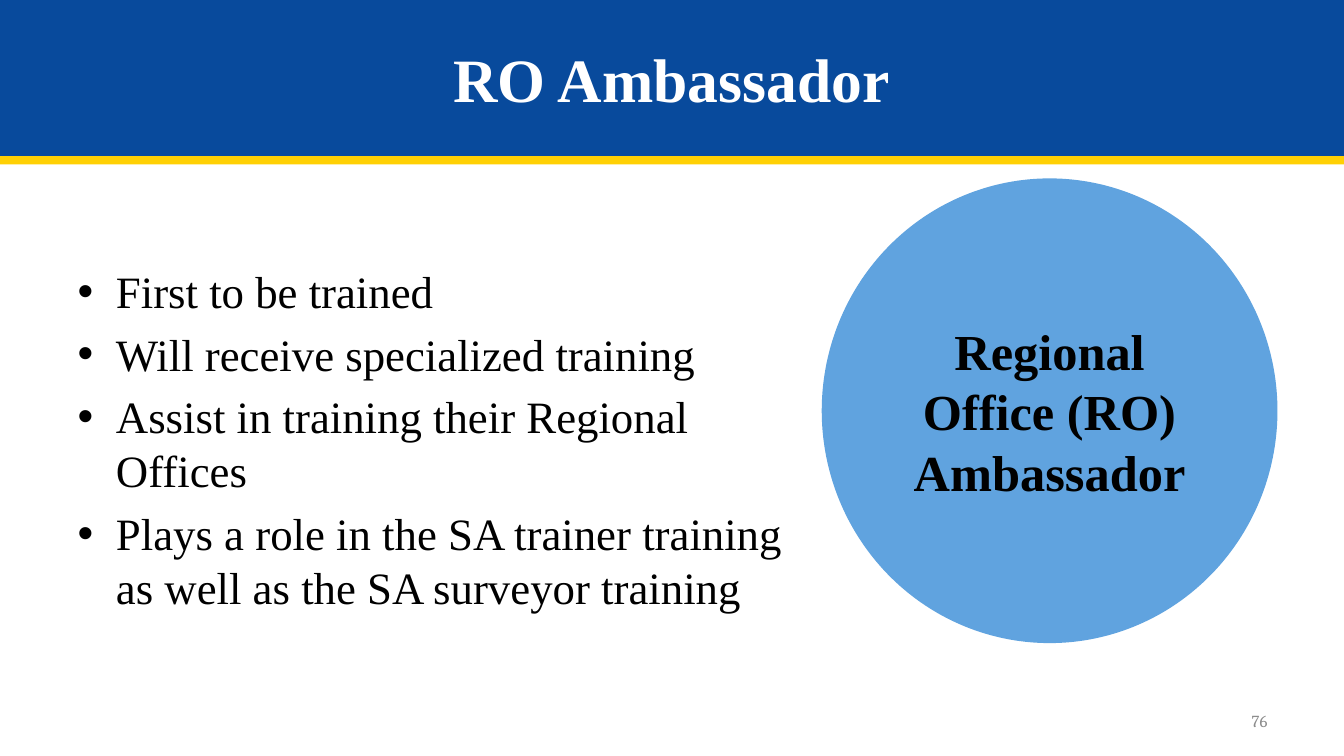
from dataclasses import dataclass

from lxml import etree
from pptx import Presentation
from pptx.dml.color import RGBColor
from pptx.enum.shapes import MSO_SHAPE
from pptx.enum.text import MSO_ANCHOR, MSO_AUTO_SIZE, PP_ALIGN
from pptx.oxml.ns import qn
from pptx.util import Inches, Pt

RECTANGLE = MSO_SHAPE.RECTANGLE
CONNECTOR_CIRCLE = MSO_SHAPE.FLOWCHART_CONNECTOR
MIDDLE = MSO_ANCHOR.MIDDLE
NO_AUTOFIT = MSO_AUTO_SIZE.NONE
LEFT, CENTER, RIGHT = PP_ALIGN.LEFT, PP_ALIGN.CENTER, PP_ALIGN.RIGHT

SLIDE_WIDTH, SLIDE_HEIGHT = 13.33, 7.5
BANNER_HEIGHT = 1.55
BULLET_INDENT = 0.38
DUTIES = [
    "First to be trained",
    "Will receive specialized training",
    "Assist in training their Regional Offices",
    "Plays a role in the SA trainer training as well as the SA surveyor training",
]


@dataclass(frozen=True)
class Theme:
    font: str = "Times New Roman"
    number_font: str = "Cambria"
    banner: str = "084A9C"
    stripe: str = "FFD004"
    circle: str = "60A3DF"
    light: str = "FFFFFF"
    dark: str = "000000"
    muted: str = "8C8C8C"
    title_size: int = 44
    circle_size: int = 36
    body_size: int = 32
    number_size: int = 12


class SlideBuilder:
    def __init__(self, presentation, theme):
        self.theme = theme
        self.slide = presentation.slides.add_slide(presentation.slide_layouts[1])

    def place(self, shape, box):
        shape.left, shape.top, shape.width, shape.height = map(Inches, box)

    def fill(self, shape, color):
        shape.fill.solid()
        shape.fill.fore_color.rgb = RGBColor.from_string(color)

    def format_text(self, shape, size, color, alignment, bold=False, font=None):
        frame = shape.text_frame
        frame.word_wrap = True
        frame.auto_size = NO_AUTOFIT
        frame.vertical_anchor = MIDDLE
        for paragraph in frame.paragraphs:
            paragraph.alignment = alignment
            for run in paragraph.runs:
                run.font.name = font or self.theme.font
                run.font.size = Pt(size)
                run.font.bold = bold
                run.font.color.rgb = RGBColor.from_string(color)

    def title(self, text, box):
        title = self.slide.shapes.title
        self.place(title, box)
        self.fill(title, self.theme.banner)
        title.text_frame.text = text
        self.format_text(title, self.theme.title_size, self.theme.light, CENTER, bold=True)

    def bullets(self, items, box):
        body = self.slide.placeholders[1]
        self.place(body, box)
        body.text_frame.text = "\n".join(items)
        for index, paragraph in enumerate(body.text_frame.paragraphs):
            properties = paragraph._p.get_or_add_pPr()
            properties.set("marL", str(Inches(BULLET_INDENT)))
            properties.set("indent", str(-Inches(BULLET_INDENT)))
            etree.SubElement(properties, qn("a:buFont")).set("typeface", "Arial")
            etree.SubElement(properties, qn("a:buChar")).set("char", "•")
            paragraph.space_before = Pt(0.2 * self.theme.body_size if index else 0)
        self.format_text(body, self.theme.body_size, self.theme.dark, LEFT)

    def shape(self, preset, box, color, text=""):
        shape = self.slide.shapes.add_shape(preset, *map(Inches, box))
        shape.shadow.inherit = False
        self.fill(shape, color)
        shape.line.fill.background()
        if text:
            shape.text_frame.text = text
            self.format_text(shape, self.theme.circle_size, self.theme.dark, CENTER, bold=True)

    def page_number(self, text, box):
        number = self.slide.shapes.add_textbox(*map(Inches, box))
        number.text_frame.text = text
        self.format_text(number, self.theme.number_size, self.theme.muted, RIGHT,
                         font=self.theme.number_font)


def main():
    presentation = Presentation()
    presentation.slide_width = Inches(SLIDE_WIDTH)
    presentation.slide_height = Inches(SLIDE_HEIGHT)
    theme = Theme()
    builder = SlideBuilder(presentation, theme)
    builder.title("RO Ambassador", (0, 0, SLIDE_WIDTH, BANNER_HEIGHT))
    builder.shape(RECTANGLE, (0, BANNER_HEIGHT, SLIDE_WIDTH, 0.08), theme.stripe)
    builder.bullets(DUTIES, (0.67, 2, 7.28, 4.7))
    builder.page_number("76", (9.56, 6.95, 3.11, 0.4))
    builder.shape(CONNECTOR_CIRCLE, (8.15, 1.77, 4.52, 4.61), theme.circle,
                  "Regional Office (RO)\vAmbassador")
    presentation.save("out.pptx")


if __name__ == "__main__":
    main()
